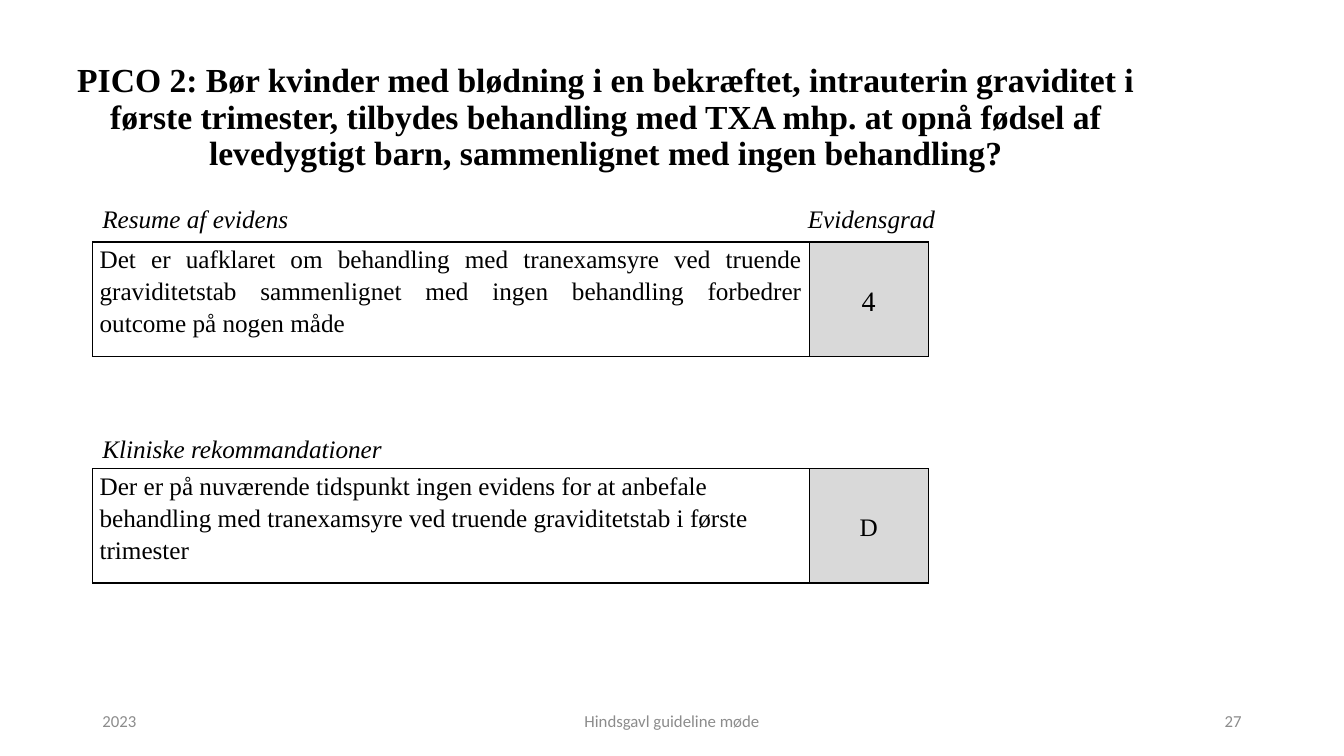
from dataclasses import dataclass

import pptx
import pptx.dml.color
import pptx.enum.text
import pptx.oxml
import pptx.oxml.ns
import pptx.util
from pptx.util import Cm

BLACK = pptx.dml.color.RGBColor(0x00, 0x00, 0x00)
FOOTER_GREY = pptx.dml.color.RGBColor(0x8C, 0x8C, 0x8C)
GRADE_GREY = pptx.dml.color.RGBColor(0xD9, 0xD9, 0xD9)

ALIGN = pptx.enum.text.PP_ALIGN
ANCHOR = pptx.enum.text.MSO_ANCHOR
Pt = pptx.util.Pt

SERIF = {"name": "Times New Roman", "size": Pt(18)}
LEFT = 2.33
TEXT_WIDTH, GRADE_WIDTH, ROW_HEIGHT = 18.06, 3.0, 2.88


@dataclass
class Label:
    text: str
    box: tuple[float, float, float, float]  # left, top, width, height in cm
    font: dict
    paragraph: dict
    color: pptx.dml.color.RGBColor = BLACK
    anchor: ANCHOR = ANCHOR.TOP
    tab: float = 0


@dataclass
class Statement:
    text: str
    grade: str
    top: float
    alignment: ALIGN
    grade_size: int


def set_all(target: object, values: dict) -> None:
    for name, value in values.items():
        setattr(target, name, value)


def write(frame, text: str, font: dict, paragraph: dict,
          color: pptx.dml.color.RGBColor, tab: float = 0) -> None:
    line = frame.paragraphs[0]
    line.text = text
    set_all(line, paragraph)
    if tab:
        line._p.get_or_add_pPr().append(pptx.oxml.parse_xml(
            f'<a:tabLst {pptx.oxml.ns.nsdecls("a")}>'
            f'<a:tab pos="{Cm(tab)}" algn="l"/></a:tabLst>'))
    run = line.runs[0]
    set_all(run.font, font)
    run.font.color.rgb = color


def add_label(slide, label: Label) -> None:
    frame = slide.shapes.add_textbox(*map(Cm, label.box)).text_frame
    set_all(frame, {"word_wrap": True, "vertical_anchor": label.anchor})
    write(frame, label.text, label.font, label.paragraph, label.color, label.tab)


def add_borders(cell) -> None:
    properties = cell._tc.get_or_add_tcPr()
    for side in ("lnL", "lnR", "lnT", "lnB"):
        properties.append(pptx.oxml.parse_xml(
            f'<a:{side} {pptx.oxml.ns.nsdecls("a")} w="{Pt(1)}">'
            f'<a:solidFill><a:srgbClr val="{BLACK}"/></a:solidFill></a:{side}>'))


def add_statement(slide, statement: Statement) -> None:
    table = slide.shapes.add_table(
        1, 2, Cm(LEFT), Cm(statement.top),
        Cm(TEXT_WIDTH + GRADE_WIDTH), Cm(ROW_HEIGHT)).table
    set_all(table, {"first_row": False, "horz_banding": False})
    table.rows[0].height = Cm(ROW_HEIGHT)
    parts = (
        (statement.text, TEXT_WIDTH, statement.alignment, ANCHOR.TOP, 18),
        (statement.grade, GRADE_WIDTH, ALIGN.CENTER, ANCHOR.MIDDLE, statement.grade_size),
    )
    for column, (text, width, alignment, anchor, size) in enumerate(parts):
        table.columns[column].width = Cm(width)
        cell = table.cell(0, column)
        set_all(cell, {"margin_left": Cm(0.18), "margin_right": Cm(0.18),
                       "margin_top": 0, "margin_bottom": 0,
                       "vertical_anchor": anchor})
        write(cell.text_frame, text, SERIF | {"size": Pt(size)},
              {"alignment": alignment, "line_spacing": 1.15, "space_after": Pt(10)},
              BLACK)
        add_borders(cell)
        if column == 1:
            cell.fill.solid()
            cell.fill.fore_color.rgb = GRADE_GREY
        else:
            cell.fill.background()


def footer(text: str, left: float, width: float, alignment: ALIGN) -> Label:
    return Label(text, (left, 17.65, width, 1.02),
                 {"name": "Calibri", "size": Pt(12)}, {"alignment": alignment},
                 FOOTER_GREY, ANCHOR.MIDDLE)


LABELS = (
    # Question
    Label("PICO 2: Bør kvinder med blødning i en bekræftet, intrauterin graviditet i "
          "første trimester, tilbydes behandling med TXA mhp. at opnå fødsel af "
          "levedygtigt barn, sammenlignet med ingen behandling?",
          (0.66, 1.14, 29.21, 3.68), SERIF | {"size": Pt(24), "bold": True},
          {"alignment": ALIGN.CENTER, "line_spacing": 0.9}, anchor=ANCHOR.MIDDLE),
    # Footer
    footer("2023", LEFT, 7.62, ALIGN.LEFT),
    footer("Hindsgavl guideline møde", 11.22, 11.43, ALIGN.CENTER),
    footer("27", 23.92, 7.62, ALIGN.RIGHT),
    # Table headings
    Label("Resume af evidens\tEvidensgrad", (LEFT, 5.08, 29.21, 12.09),
          SERIF | {"italic": True}, {"line_spacing": 0.9}, tab=17.78),
    Label("Kliniske rekommandationer", (LEFT, 10.8, 16.92, 1.02),
          SERIF | {"italic": True}, {"alignment": ALIGN.LEFT}),
)

STATEMENTS = (
    Statement("Det er uafklaret om behandling med tranexamsyre ved truende "
              "graviditetstab sammenlignet med ingen behandling forbedrer "
              "outcome på nogen måde", "4", 6.1, ALIGN.JUSTIFY, 20),
    Statement("Der er på nuværende tidspunkt ingen evidens for at anbefale "
              "behandling med tranexamsyre ved truende graviditetstab i første "
              "trimester", "D", 11.81, ALIGN.LEFT, 18),
)


def main() -> None:
    presentation = pptx.Presentation()
    set_all(presentation, {"slide_width": Cm(33.87), "slide_height": Cm(19.05)})
    slide = presentation.slides.add_slide(presentation.slide_layouts[6])
    for label in LABELS:
        add_label(slide, label)
    for statement in STATEMENTS:
        add_statement(slide, statement)
    presentation.save("out.pptx")


if __name__ == "__main__":
    main()
